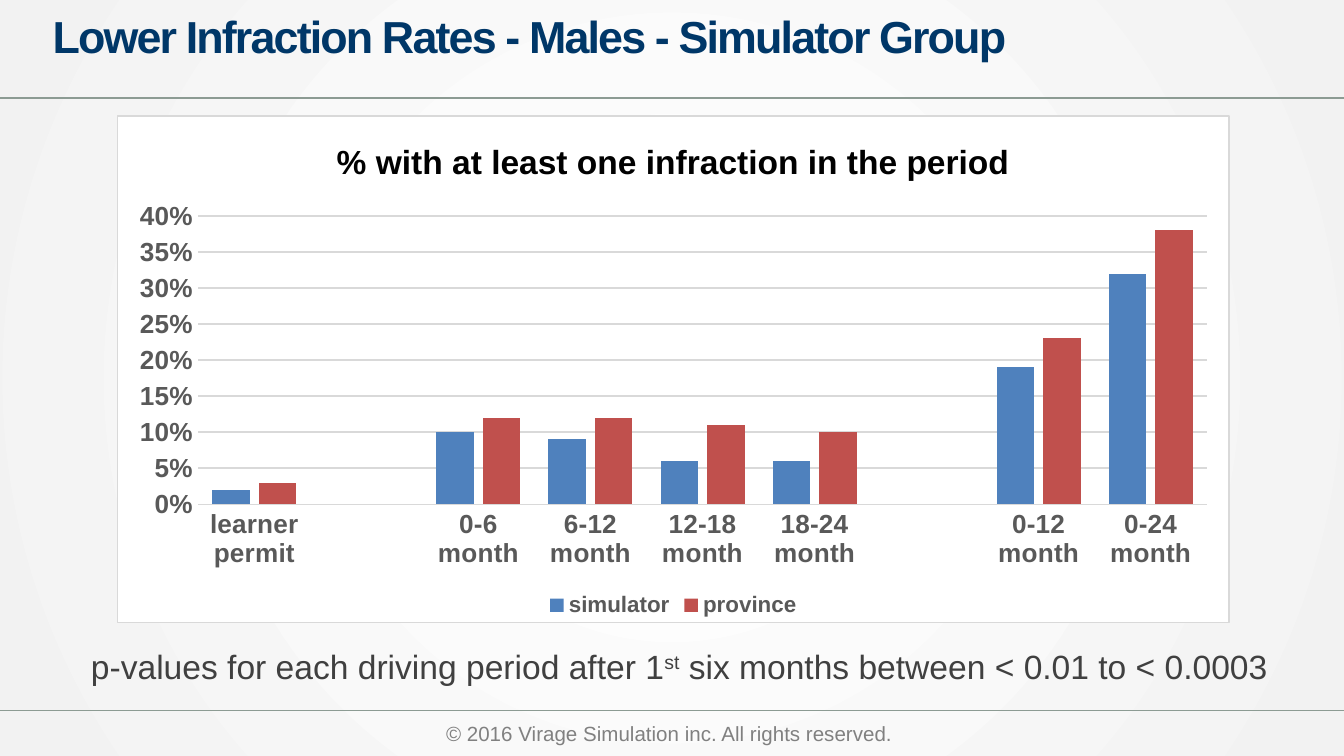
"""Build the slide on infraction rates of male drivers."""
from lxml.etree import SubElement as Sub
from pptx import Presentation
from pptx.chart.data import CategoryChartData as Data
from pptx.dml.color import RGBColor as RGB
from pptx.enum.chart import XL_CHART_TYPE as Kind
from pptx.enum.chart import XL_LEGEND_POSITION as Place
from pptx.enum.chart import XL_TICK_MARK as Tick
from pptx.enum.shapes import MSO_CONNECTOR as Link
from pptx.enum.text import MSO_ANCHOR as Anchor
from pptx.enum.text import MSO_AUTO_SIZE as Auto
from pptx.enum.text import PP_ALIGN as Align
from pptx.oxml import parse_xml
from pptx.oxml.ns import nsdecls, qn
from pptx.util import Cm, Pt

WHITE = RGB(0xFF, 0xFF, 0xFF)
PALE = RGB(0xF2, 0xF2, 0xF2)
NAVY = RGB(0x00, 0x37, 0x68)
SAGE = RGB(0x8C, 0x9B, 0x93)
BLACK = RGB(0, 0, 0)
DARK = RGB(0x40, 0x40, 0x40)
SLATE = RGB(0x59, 0x59, 0x59)
GREY = RGB(0x80, 0x80, 0x80)
LIGHT = RGB(0xD9, 0xD9, 0xD9)
BLUE = RGB(0x4F, 0x81, 0xBD)
RED = RGB(0xC0, 0x50, 0x4D)

WIDE, HIGH = 25.4, 14.29
CATS = ["learner permit", "", "0-6 month", "6-12 month", "12-18 month",
        "18-24 month", "", "0-12 month", "0-24 month"]
RATES = [
    ("simulator", BLUE, [0.02, None, 0.1, 0.09, 0.06, 0.06, None, 0.19, 0.32]),
    ("province", RED, [0.03, None, 0.12, 0.12, 0.11, 0.1, None, 0.23, 0.38]),
]


def apply(item, **values):
    for name, value in values.items():
        setattr(item, name, value)


class Deck:
    def __init__(self, face):
        self.face = face
        self.show = Presentation()
        apply(self.show, slide_width=Cm(WIDE), slide_height=Cm(HIGH))
        self.slide = self.show.slides.add_slide(self.show.slide_layouts[5])

    def style(self, font, size, color, bold=False):
        apply(font, name=self.face, size=Pt(size), bold=bold)
        font.color.rgb = color

    def back(self):
        fill = self.slide.background.fill
        fill.gradient()
        for stop, (spot, color) in zip(fill.gradient_stops,
                                       [(0.08, WHITE), (1, PALE)]):
            stop.position = spot
            stop.color.rgb = color
        grad = self.slide.element.find(".//" + qn("a:gradFill"))
        grad.remove(grad.find(qn("a:lin")))
        ring = Sub(grad, qn("a:path"), path="circle")
        Sub(ring, qn("a:fillToRect"), dict.fromkeys("ltrb", "50000"))

    def rule(self, top):
        line = self.slide.shapes.add_connector(
            Link.STRAIGHT, Cm(WIDE), Cm(top), Cm(0), Cm(top))
        line.line.color.rgb = SAGE
        line.line.width = Pt(0.75)
        Sub(line._element.spPr, qn("a:effectLst"))

    def title(self, text, left, top, width, height):
        box = self.slide.shapes.title
        apply(box, left=Cm(left), top=Cm(top),
              width=Cm(width), height=Cm(height))
        frame = box.text_frame
        frame.text = text
        apply(frame, auto_size=Auto.NONE, vertical_anchor=Anchor.MIDDLE)
        para = frame.paragraphs[0]
        para.alignment = Align.LEFT
        run = para.runs[0]
        self.style(run.font, 24, NAVY, True)
        run.font._element.set("spc", "-100")

    def text(self, parts, left, top, width, height, size, color):
        box = self.slide.shapes.add_textbox(
            Cm(left), Cm(top), Cm(width), Cm(height))
        apply(box.text_frame, word_wrap=False,
              auto_size=Auto.SHAPE_TO_FIT_TEXT)
        para = box.text_frame.paragraphs[0]
        for part, lift in parts:
            run = para.add_run()
            run.text = part
            self.style(run.font, size, color)
            if lift:
                run.font._element.set("baseline", str(lift * 1000))

    def chart(self, title, left, top, width, height):
        data = Data(number_format="0%")
        data.categories = CATS
        for name, _, rates in RATES:
            data.add_series(name, rates)
        chart = self.slide.shapes.add_chart(
            Kind.COLUMN_CLUSTERED, Cm(left), Cm(top),
            Cm(width), Cm(height), data).chart
        self.style(chart.font, 10, BLACK)
        head = chart.chart_title.text_frame
        head.text = title
        self.style(head.paragraphs[0].runs[0].font, 18, BLACK, True)
        plot = chart.plots[0]
        apply(plot, gap_width=75, overlap=-25, vary_by_categories=False)
        for bars, (_, color, _) in zip(plot.series, RATES):
            bars.format.fill.solid()
            bars.format.fill.fore_color.rgb = color
        self.axes(chart)
        chart.has_legend = True
        apply(chart.legend, position=Place.BOTTOM, include_in_layout=False)
        self.style(chart.legend.font, 12, SLATE, True)
        frame = parse_xml(
            f'<c:spPr {nsdecls("c", "a")}>'
            f'<a:solidFill><a:srgbClr val="{WHITE}"/></a:solidFill>'
            f'<a:ln w="{Pt(0.75)}"><a:solidFill><a:srgbClr val="{LIGHT}"/>'
            '</a:solidFill></a:ln></c:spPr>')
        chart._chartSpace.find(qn("c:chart")).addnext(frame)

    def axes(self, chart):
        cat, val = chart.category_axis, chart.value_axis
        for axis in (cat, val):
            apply(axis, major_tick_mark=Tick.NONE, minor_tick_mark=Tick.NONE)
            self.style(axis.tick_labels.font, 14, SLATE, True)
        apply(val, minimum_scale=0, maximum_scale=0.4, major_unit=0.05)
        apply(val.tick_labels, number_format="0%",
              number_format_is_linked=False)
        val.format.line.fill.background()
        for line in (cat.format.line, val.major_gridlines.format.line):
            line.color.rgb = LIGHT
            line.width = Pt(0.75)


def main():
    deck = Deck("Arial")
    deck.back()
    for top in (1.85, 13.43):
        deck.rule(top)
    deck.text([("© 2016 Virage Simulation inc. All rights reserved.", 0)],
              8.18, 13.51, 9.04, 0.74, 11, GREY)
    deck.title("Lower Infraction Rates - Males - Simulator Group",
               0.74, 0, 20.14, 1.35)
    deck.text([("p-values for each driving period after 1", 0), ("st", 30),
               (" six months between < 0.01 to < 0.0003", 0)],
              1.47, 12.09, 23.32, 1.02, 18, DARK)
    deck.chart("% with at least one infraction in the period",
               2.21, 2.18, 21.03, 9.6)
    deck.show.save("out.pptx")


if __name__ == "__main__":
    main()
